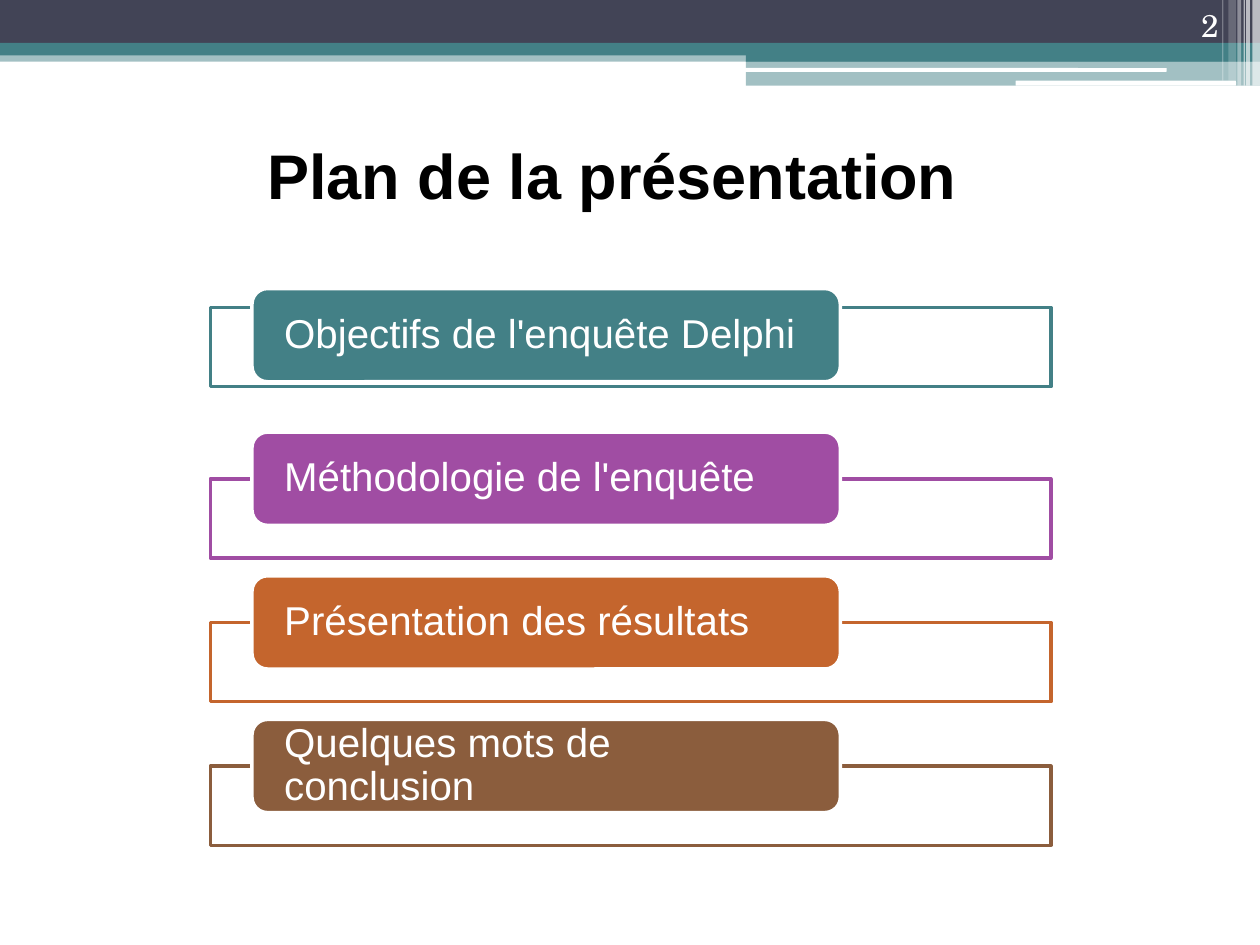
from dataclasses import dataclass

from lxml.etree import SubElement
from pptx import Presentation
from pptx.dml.color import RGBColor
from pptx.enum.shapes import MSO_SHAPE
from pptx.enum.text import MSO_ANCHOR, PP_ALIGN
from pptx.oxml.ns import qn
from pptx.shapes.autoshape import Shape
from pptx.slide import Slide
from pptx.util import Inches, Pt

COLORS = {
    "navy": "424456",
    "teal": "438086",
    "purple": "A04DA3",
    "orange": "C4652D",
    "brown": "8B5D3D",
    "white": "FFFFFF",
    "black": "000000",
}


@dataclass
class Box:
    left: float
    top: float
    width: float
    height: float
    color: str
    opacity: int = 100
    rounded: bool = False
    line: str = ""


@dataclass
class Label:
    text: str
    size: int
    color: str = "white"
    font: str = "Arial"
    bold: bool = False
    align: PP_ALIGN = PP_ALIGN.LEFT
    anchor: MSO_ANCHOR = MSO_ANCHOR.MIDDLE
    margin: float = 0.1


@dataclass
class Topic:
    text: str
    color: str
    frame_offset: float = 0.37


HEADER = [
    Box(0, 0.4, 10, 0.09, "teal", 49),
    Box(0, 0, 10, 0.34, "navy"),
    Box(0, 0.34, 10, 0.1, "teal"),
    Box(5.92, 0.39, 4.08, 0.1, "teal"),
    Box(5.92, 0.48, 4.08, 0.2, "teal", 49),
    Box(5.91, 0.54, 3.35, 0.03, "white", rounded=True),
    Box(8.06, 0.64, 1.75, 0.04, "white", rounded=True),
    Box(9.94, 0, 0.06, 0.68, "white", 64),
    Box(9.89, 0, 0.03, 0.68, "white", 64),
    Box(9.87, 0, 0.01, 0.68, "white", 60),
    Box(9.82, 0, 0.03, 0.68, "white", 40),
    Box(9.75, 0, 0.06, 0.64, "white", 20),
    Box(9.7, 0, 0.01, 0.64, "white", 29),
]

TOPICS = [
    Topic("Objectifs de l'enquête Delphi", "teal", 0.15),
    Topic("Méthodologie de l'enquête", "purple"),
    Topic("Présentation des résultats", "orange"),
    Topic("Quelques mots de conclusion", "brown"),
]
FIRST_TOPIC_TOP = 2.29
TOPIC_PITCH = 1.14


def rgb(name: str) -> RGBColor:
    return RGBColor.from_string(COLORS[name])


def draw_box(slide: Slide, box: Box) -> Shape:
    kind = MSO_SHAPE.ROUNDED_RECTANGLE if box.rounded else MSO_SHAPE.RECTANGLE
    shape = slide.shapes.add_shape(
        kind, Inches(box.left), Inches(box.top), Inches(box.width), Inches(box.height)
    )
    shape.shadow.inherit = False
    shape.fill.solid()
    shape.fill.fore_color.rgb = rgb(box.color)
    if box.opacity < 100:
        color = shape.fill._xPr.find(qn("a:solidFill")).find(qn("a:srgbClr"))
        SubElement(color, qn("a:alpha"), val=str(box.opacity * 1000))
    if box.line:
        shape.line.color.rgb = rgb(box.line)
        shape.line.width = Pt(2)
    else:
        shape.line.fill.background()
    return shape


def write_label(shape: Shape, label: Label) -> None:
    frame = shape.text_frame
    frame.text = label.text
    frame.word_wrap = True
    frame.vertical_anchor = label.anchor
    frame.margin_left = frame.margin_right = Inches(label.margin)
    paragraph = frame.paragraphs[0]
    paragraph.alignment = label.align
    font = paragraph.runs[0].font
    font.name = label.font
    font.size = Pt(label.size)
    font.bold = label.bold
    font.color.rgb = rgb(label.color)


def draw_topic(slide: Slide, topic: Topic, top: float) -> None:
    draw_box(slide, Box(1.67, top + topic.frame_offset, 6.67, 0.63, "white", 90, line=topic.color))
    tab = draw_box(slide, Box(2, top, 4.67, 0.74, topic.color, rounded=True, line="white"))
    write_label(tab, Label(topic.text, 23, margin=0.22))
    tab.text_frame.paragraphs[0].line_spacing = 0.9


def main() -> None:
    presentation = Presentation()
    presentation.slide_width = Inches(10)
    presentation.slide_height = Inches(7.5)
    slide = presentation.slides.add_slide(presentation.slide_layouts[6])

    for box in HEADER:
        draw_box(slide, box)

    title = slide.shapes.add_textbox(Inches(0.36), Inches(1.04), Inches(9), Inches(0.69))
    write_label(
        title,
        Label("Plan de la présentation", 36, "black", bold=True, align=PP_ALIGN.CENTER),
    )
    number = slide.shapes.add_textbox(Inches(8.94), Inches(0), Inches(0.83), Inches(0.4))
    write_label(
        number,
        Label("2", 18, font="TeX Gyre Schola", align=PP_ALIGN.RIGHT, anchor=MSO_ANCHOR.BOTTOM),
    )

    for index, topic in enumerate(TOPICS):
        draw_topic(slide, topic, FIRST_TOPIC_TOP + index * TOPIC_PITCH)

    presentation.save("out.pptx")


if __name__ == "__main__":
    main()
